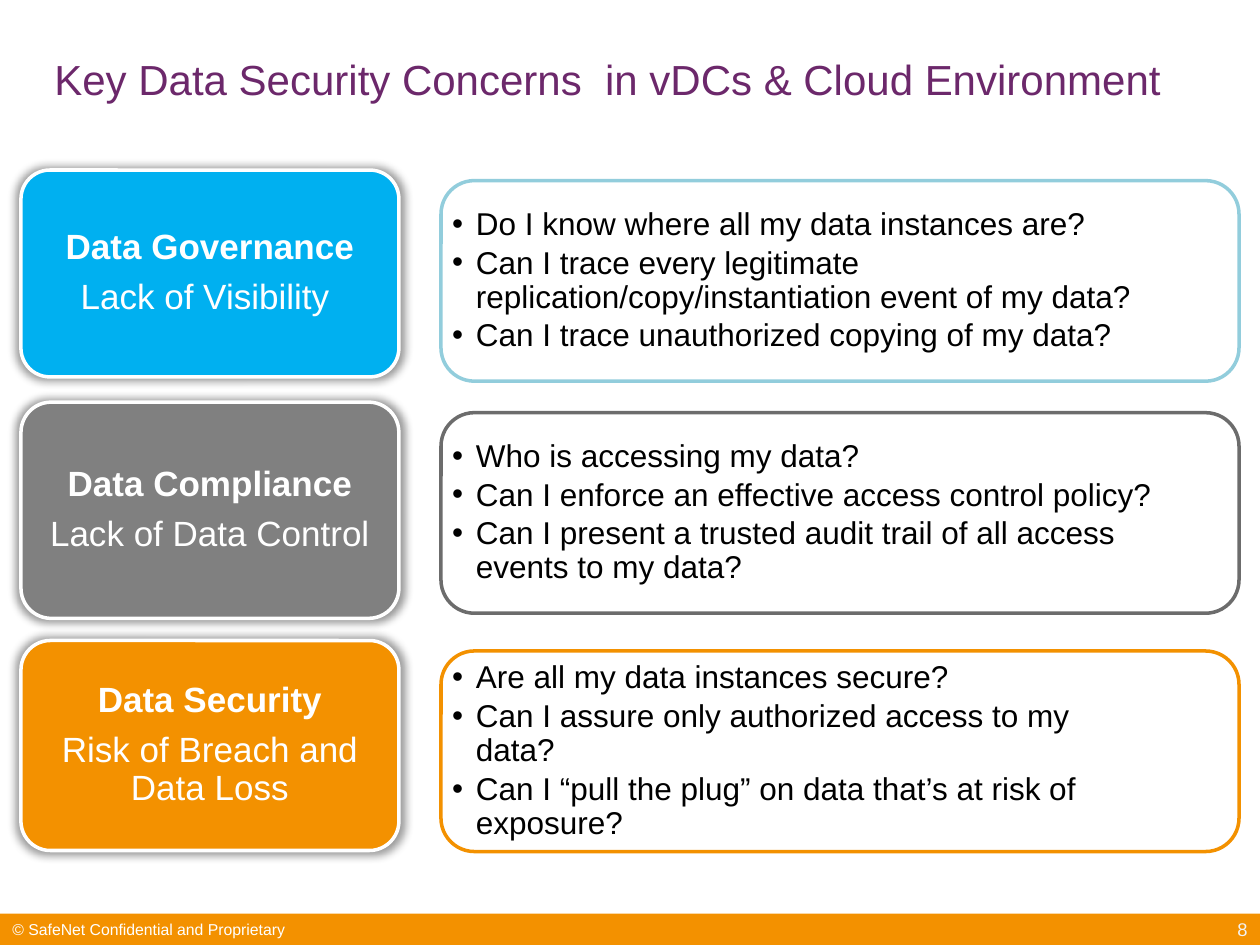
"""Builds the slide on key data security concerns in vDCs and the cloud."""
from dataclasses import dataclass

from lxml import etree
from pptx import Presentation
from pptx import util as u
from pptx.dml.color import RGBColor
from pptx.enum import shapes, text
from pptx.oxml import parse_xml
from pptx.oxml.ns import nsdecls, qn

COLUMNS, ROWS = 60, 45


@dataclass(frozen=True)
class Theme:
    font: str = "Arial"
    title: str = "6C286B"
    accent: str = "F39100"
    light: str = "FFFFFF"
    dark: str = "000000"
    page: str = "F2F2F2"
    title_size: float = 24
    label_size: float = 20
    question_size: float = 18
    page_size: float = 10.5
    footer_size: float = 9
    outline: float = 2


@dataclass(frozen=True)
class Area:
    column: float
    row: float
    columns: float
    rows: float


@dataclass(frozen=True)
class Concern:
    row: float
    rows: float
    fill: str
    outline: str
    heading: str
    risk: str
    questions: tuple[str, ...]


THEME = Theme()
CONCERNS = (
    Concern(8.1, 9.85, "00B0F0", "92CDDC", "Data Governance", "Lack of Visibility ", (
        "Do I know where all my data instances are?",
        "Can I trace every legitimate replication/copy/instantiation event of my data?",
        "Can I trace unauthorized copying of my data?")),
    Concern(19.15, 10.3, "808080", "6C6C6C", "Data Compliance", "Lack of Data Control", (
        "Who is accessing my data?",
        "Can I enforce an effective access control policy?",
        "Can I present a trusted audit trail of all access events to my data?")),
    Concern(30.5, 10, THEME.accent, THEME.accent, "Data Security", "Risk of Breach and Data Loss", (
        "Are all my data instances secure?",
        "Can I assure only authorized access to my data?",
        "Can I “pull the plug” on data that’s at risk of exposure?")),
)


def apply(target, values: dict) -> None:
    """Set every named attribute on the target."""
    for name, value in values.items():
        setattr(target, name, value)


def place(area: Area, deck) -> tuple[int, int, int, int]:
    """Turn grid cells into slide lengths."""
    across, down = deck.slide_width / COLUMNS, deck.slide_height / ROWS
    return (round(area.column * across), round(area.row * down),
            round(area.columns * across), round(area.rows * down))


def style(paragraph, size: float, color: str, bold: bool = False, **layout) -> None:
    """Format one paragraph and its font."""
    apply(paragraph, layout)
    apply(paragraph.font, {"name": THEME.font, "size": u.Pt(size), "bold": bold})
    paragraph.font.color.rgb = RGBColor.from_string(color)


def fill_frame(frame, lines: tuple[str, ...], margins: tuple[float, float, float, float]) -> list:
    """Write the lines into a wrapped, middle-anchored frame."""
    left, top, right, bottom = map(u.Inches, margins)
    apply(frame, {"word_wrap": True, "vertical_anchor": text.MSO_ANCHOR.MIDDLE,
                  "margin_left": left, "margin_top": top,
                  "margin_right": right, "margin_bottom": bottom})
    paragraphs = [frame.paragraphs[0], *(frame.add_paragraph() for _ in lines[1:])]
    for paragraph, line in zip(paragraphs, lines):
        paragraph.text = line
    return paragraphs


def add_block(slide, deck, kind, area: Area, fill: str, outline: str | None = None):
    """Draw a filled shape with an optional outline."""
    block = slide.shapes.add_shape(kind, *place(area, deck))
    block.shadow.inherit = False
    block.fill.solid()
    block.fill.fore_color.rgb = RGBColor.from_string(fill)
    if outline:
        block.line.color.rgb = RGBColor.from_string(outline)
        block.line.width = u.Pt(THEME.outline)
    else:
        block.line.fill.background()
    return block


def add_text(slide, deck, area: Area, line: str, size: float, color: str,
             align=text.PP_ALIGN.LEFT) -> None:
    """Add a single-line text box."""
    box = slide.shapes.add_textbox(*place(area, deck))
    paragraph, = fill_frame(box.text_frame, (line,), (0.1, 0.05, 0.1, 0.05))
    style(paragraph, size, color, alignment=align)


def add_halo(block) -> None:
    """Give the block a soft shadow on all sides."""
    effects = block._element.spPr.find(qn("a:effectLst"))
    effects.append(parse_xml(
        f'<a:outerShdw {nsdecls("a")} blurRad="63500" sx="102000" sy="102000" algn="ctr" '
        'rotWithShape="0"><a:srgbClr val="000000"><a:alpha val="40000"/></a:srgbClr></a:outerShdw>'))


def add_bullet(paragraph) -> None:
    """Give the paragraph a hanging bullet."""
    properties = paragraph._p.get_or_add_pPr()
    properties.set("marL", str(u.Inches(0.19)))
    properties.set("indent", str(-u.Inches(0.19)))
    etree.SubElement(properties, qn("a:buFont")).set("typeface", THEME.font)
    etree.SubElement(properties, qn("a:buChar")).set("char", "•")


def add_concern(slide, deck, concern: Concern) -> None:
    """Draw the questions panel and the label of one concern."""
    rounded = shapes.MSO_SHAPE.ROUNDED_RECTANGLE
    panel = add_block(slide, deck, rounded, Area(21, concern.row + 0.5, 38, 9.55),
                      THEME.light, concern.outline)
    for question in fill_frame(panel.text_frame, concern.questions, (0.01, 0.21, 0.61, 0.21)):
        add_bullet(question)
        style(question, THEME.question_size, THEME.dark, level=1, line_spacing=0.9,
              space_after=u.Pt(0.15 * THEME.question_size), alignment=text.PP_ALIGN.LEFT)

    label = add_block(slide, deck, rounded, Area(1, concern.row, 18, concern.rows),
                      concern.fill, THEME.light)
    label.adjustments[0] = 0.14
    add_halo(label)
    lines = fill_frame(label.text_frame, (concern.heading, concern.risk), (0.11, 0.06, 0.11, 0.06))
    for line, bold in zip(lines, (True, False)):
        style(line, THEME.label_size, THEME.light, bold, line_spacing=0.9,
              space_after=u.Pt(0.35 * THEME.label_size), alignment=text.PP_ALIGN.CENTER)


def main() -> None:
    """Build and save the slide."""
    deck = Presentation()
    apply(deck, {"slide_width": u.Inches(10), "slide_height": u.Inches(7.5)})
    slide = deck.slides.add_slide(deck.slide_layouts[6])
    add_block(slide, deck, shapes.MSO_SHAPE.RECTANGLE, Area(0, 43.5, 60, 1.5), THEME.accent)
    add_text(slide, deck, Area(2, 0, 56.5, 7.5),
             "Key Data Security Concerns  in vDCs & Cloud Environment",
             THEME.title_size, THEME.title)
    add_text(slide, deck, Area(46, 43.5, 14, 1.5), "8", THEME.page_size, THEME.page,
             text.PP_ALIGN.RIGHT)
    for concern in reversed(CONCERNS):
        add_concern(slide, deck, concern)
    add_text(slide, deck, Area(0, 43.5, 19, 1.5), "© SafeNet Confidential and Proprietary",
             THEME.footer_size, THEME.light)
    deck.save("out.pptx")


if __name__ == "__main__":
    main()
